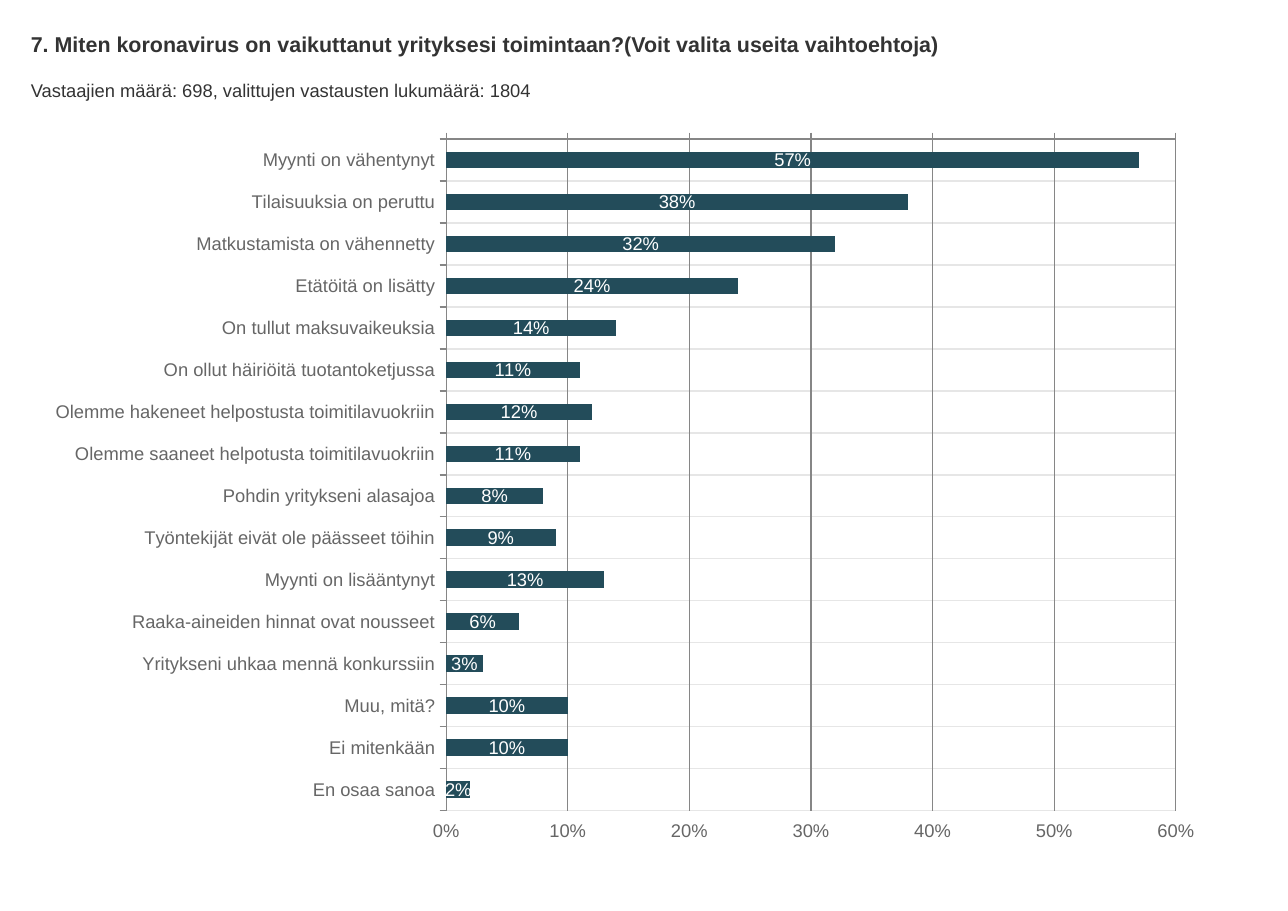
from lxml import etree
from pptx import Presentation
from pptx.chart.data import CategoryChartData
from pptx.dml.color import RGBColor
from pptx.enum.chart import XL_CHART_TYPE, XL_LABEL_POSITION, XL_TICK_LABEL_POSITION, XL_TICK_MARK
from pptx.enum.text import MSO_AUTO_SIZE
from pptx.oxml.ns import qn
from pptx.util import Inches, Pt

BARS = XL_CHART_TYPE.BAR_CLUSTERED
CENTER = XL_LABEL_POSITION.CENTER
LABELS_LOW, LABELS_HIGH = XL_TICK_LABEL_POSITION.LOW, XL_TICK_LABEL_POSITION.HIGH
TICK_OUT, TICK_NONE = XL_TICK_MARK.OUTSIDE, XL_TICK_MARK.NONE
FIT_SHAPE = MSO_AUTO_SIZE.SHAPE_TO_FIT_TEXT

INK = RGBColor(0x33, 0x33, 0x33)
AXIS_TEXT = RGBColor(0x66, 0x66, 0x66)
AXIS_LINE = RGBColor(0x86, 0x86, 0x86)
ROW_LINE = RGBColor(0xE6, 0xE6, 0xE6)
BAR = RGBColor(0x23, 0x4C, 0x5A)
WHITE = RGBColor(0xFF, 0xFF, 0xFF)
BLACK = RGBColor(0, 0, 0)

# text, top, height, size, bold
HEADINGS = [
    ("7. Miten koronavirus on vaikuttanut yrityksesi toimintaan?(Voit valita useita vaihtoehtoja)",
     0.28, 0.23, 14, True),
    ("Vastaajien määrä: 698, valittujen vastausten lukumäärä: 1804", 0.72, 0.2, 12, False),
]
ANSWERS = {
    "Myynti on vähentynyt": 0.57,
    "Tilaisuuksia on peruttu": 0.38,
    "Matkustamista on vähennetty": 0.32,
    "Etätöitä on lisätty": 0.24,
    "On tullut maksuvaikeuksia": 0.14,
    "On ollut häiriöitä tuotantoketjussa": 0.11,
    "Olemme hakeneet helpostusta toimitilavuokriin": 0.12,
    "Olemme saaneet helpotusta toimitilavuokriin": 0.11,
    "Pohdin yritykseni alasajoa": 0.08,
    "Työntekijät eivät ole päässeet töihin": 0.09,
    "Myynti on lisääntynyt": 0.13,
    "Raaka-aineiden hinnat ovat nousseet": 0.06,
    "Yritykseni uhkaa mennä konkurssiin": 0.03,
    "Muu, mitä?": 0.1,
    "Ei mitenkään": 0.1,
    "En osaa sanoa": 0.02,
}

SLIDE_WIDTH, SLIDE_HEIGHT = 11.69, 8.27
MARGIN = 0.28
CHART_TOP, CHART_WIDTH, CHART_HEIGHT = 1.13, 10.77, 6.63
PLOT_SHARES = {"x": 0.35, "y": 0.02, "w": 0.615, "h": 0.92}


def apply_format(target, values):
    for attribute, value in values.items():
        setattr(target, attribute, value)


def style_font(font, size, color, name="Arial", bold=False):
    apply_format(font, {"size": Pt(size), "name": name, "bold": bold})
    font.color.rgb = color


def style_line(line, color):
    line.color.rgb = color
    line.width = Pt(0.75)


def add_heading(slide, text, top, height, size, bold):
    box = slide.shapes.add_textbox(Inches(MARGIN), Inches(top),
                                   Inches(SLIDE_WIDTH - 2 * MARGIN), Inches(height))
    frame = box.text_frame
    apply_format(frame, {"margin_left": 0, "margin_right": 0, "margin_top": 0, "margin_bottom": 0,
                         "word_wrap": True, "auto_size": FIT_SHAPE})
    run = frame.paragraphs[0].add_run()
    run.text = text
    style_font(run.font, size, INK, bold=bold)


def style_axis(axis, grid_color, values):
    apply_format(axis, {"has_major_gridlines": True, "major_tick_mark": TICK_OUT,
                        "minor_tick_mark": TICK_NONE, **values})
    style_line(axis.major_gridlines.format.line, grid_color)
    style_line(axis.format.line, AXIS_LINE)
    style_font(axis.tick_labels.font, 12, AXIS_TEXT)


def place_plot(chart):
    """Fix the inner plot area at its shares of the chart frame."""
    plot_area = chart.plots[0]._element.getparent()
    for automatic in plot_area.findall(qn("c:layout")):
        plot_area.remove(automatic)
    layout = etree.Element(qn("c:layout"))
    manual = etree.SubElement(layout, qn("c:manualLayout"))
    settings = {"layoutTarget": "inner", "xMode": "edge", "yMode": "edge", **PLOT_SHARES}
    for tag, value in settings.items():
        etree.SubElement(manual, qn(f"c:{tag}")).set("val", str(value))
    plot_area.insert(0, layout)


def add_answer_chart(slide):
    data = CategoryChartData(number_format="0%")
    data.categories = list(ANSWERS)
    data.add_series("Series 1", list(ANSWERS.values()))
    chart = slide.shapes.add_chart(BARS, Inches(MARGIN), Inches(CHART_TOP),
                                   Inches(CHART_WIDTH), Inches(CHART_HEIGHT), data).chart
    apply_format(chart, {"has_title": False, "has_legend": False})
    style_font(chart.font, 14, BLACK, "Calibri")

    style_axis(chart.category_axis, ROW_LINE,
               {"reverse_order": True, "tick_label_position": LABELS_LOW})
    style_axis(chart.value_axis, AXIS_LINE,
               {"minimum_scale": 0, "maximum_scale": 0.6, "major_unit": 0.1,
                "tick_label_position": LABELS_HIGH})
    apply_format(chart.value_axis.tick_labels,
                 {"number_format": "0%", "number_format_is_linked": False})

    plot = chart.plots[0]
    apply_format(plot, {"gap_width": 150, "vary_by_categories": False, "has_data_labels": True})
    fill = plot.series[0].format.fill
    fill.solid()
    fill.fore_color.rgb = BAR
    apply_format(plot.data_labels, {"show_value": True, "position": CENTER,
                                    "number_format": "0%", "number_format_is_linked": False})
    style_font(plot.data_labels.font, 12, WHITE)
    place_plot(chart)


def main():
    deck = Presentation()
    apply_format(deck, {"slide_width": Inches(SLIDE_WIDTH), "slide_height": Inches(SLIDE_HEIGHT)})
    slide = deck.slides.add_slide(deck.slide_layouts[6])
    for heading in HEADINGS:
        add_heading(slide, *heading)
    add_answer_chart(slide)
    deck.save("out.pptx")


if __name__ == "__main__":
    main()
